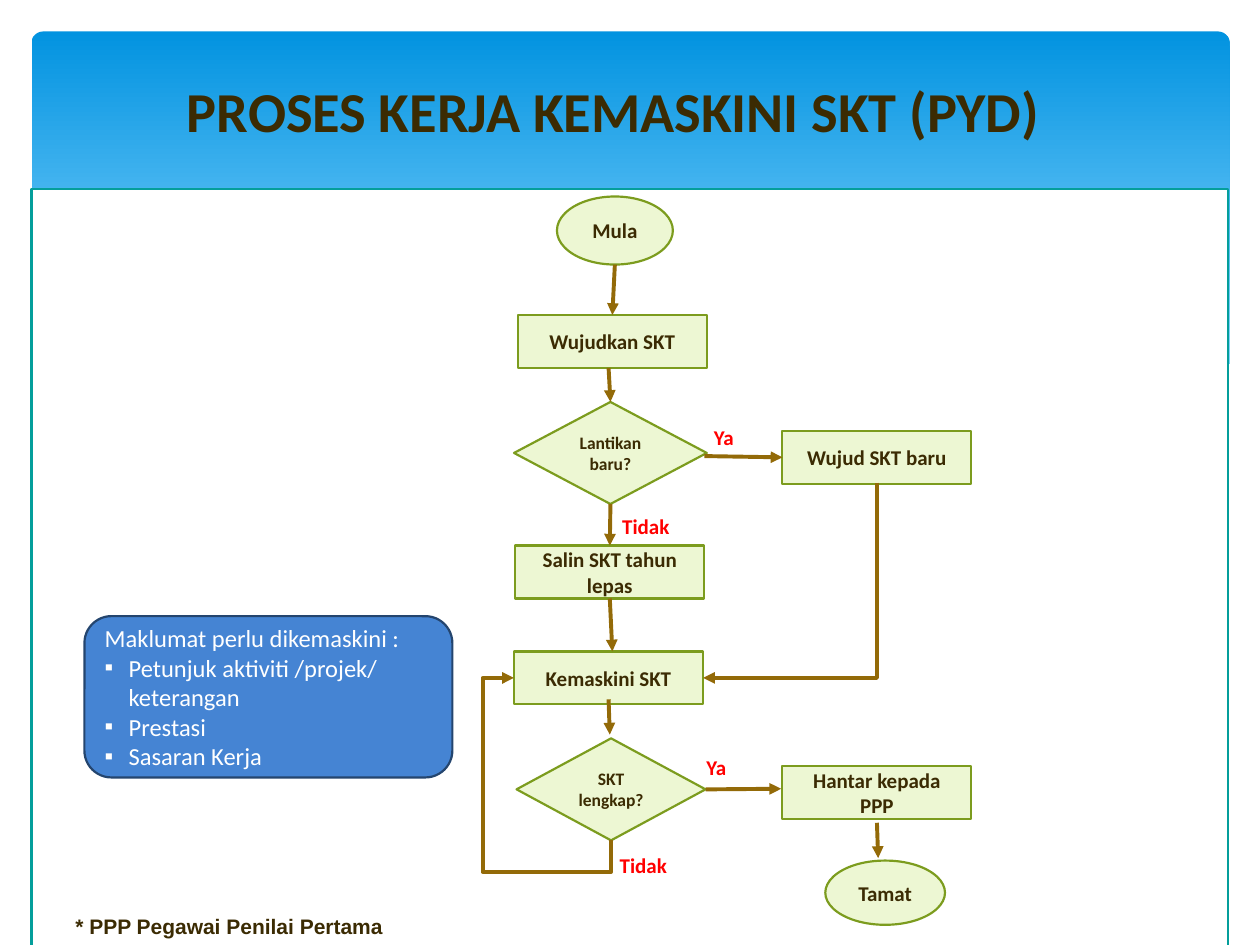
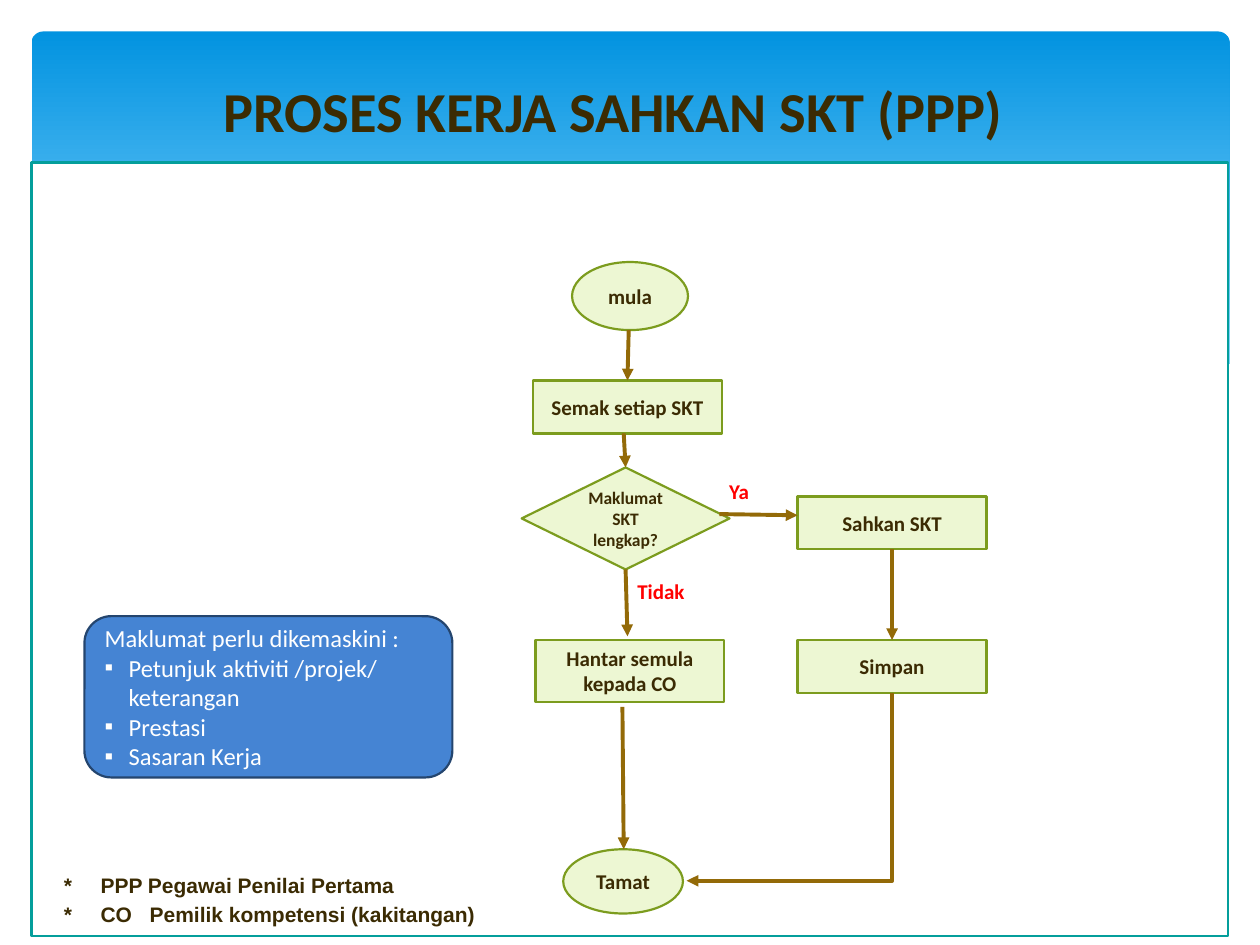
from dataclasses import dataclass

import pptx
import pptx.dml.color
import pptx.enum.shapes
import pptx.enum.text
import pptx.oxml.ns
import pptx.util
from lxml import etree

PX = 9144
JOIN_REACH = 2 * PX
QUARTER_TURN = 5400000
HANG = 19

Preset = pptx.enum.shapes.MSO_SHAPE
Align = pptx.enum.text.PP_ALIGN
Anchor = pptx.enum.text.MSO_ANCHOR
qn = pptx.oxml.ns.qn


@dataclass(frozen=True)
class TextStyle:
    font: str
    size: float
    color: str
    bold: bool = True
    before: float = 0


@dataclass(frozen=True)
class Theme:
    band_top: str = "0293E0"
    band_bottom: str = "83D3FE"
    panel_fill: str = "FFFFFF"
    panel_line: str = "049E9B"
    node_fill: str = "EDF7D3"
    node_line: str = "7C9C1E"
    arrow: str = "936A08"
    info_fill: str = "4584D3"
    info_line: str = "24456E"
    outline: float = 1.25
    arrow_width: float = 2.25
    title: TextStyle = TextStyle("Calibri", 32.2, "3B2B03")
    terminal: TextStyle = TextStyle("Calibri", 12, "3B2B03")
    step: TextStyle = TextStyle("Calibri", 12, "3B2B03", before=2.4)
    decision: TextStyle = TextStyle("Calibri", 10, "3B2B03")
    answer: TextStyle = TextStyle("Calibri", 12, "FF0000", before=2.4)
    info: TextStyle = TextStyle("Calibri", 14, "FFFFFF", bold=False)
    note: TextStyle = TextStyle("Arial", 12, "3B2B03", before=2.4)


THEME = Theme()


@dataclass(frozen=True)
class Area:
    left: int
    top: int
    width: int
    height: int

    def emu(self) -> tuple[int, ...]:
        return tuple(n * PX for n in (self.left, self.top, self.width, self.height))


@dataclass(frozen=True)
class Node:
    preset: Preset
    area: Area
    text: str
    style: TextStyle


@dataclass(frozen=True)
class Link:
    start: tuple[int, int]
    end: tuple[int, int]


@dataclass(frozen=True)
class Elbow:
    start: tuple[int, int]
    end: tuple[int, int]
    preset: str = "bentConnector2"
    adjustments: tuple[int, ...] = ()


@dataclass(frozen=True)
class Label:
    area: Area
    lines: tuple[str, ...]
    style: TextStyle
    align: Align = Align.LEFT
    tabs: tuple[int, ...] = ()


@dataclass(frozen=True)
class FlowPage:
    title: str
    panel_top: int
    nodes: tuple[Node, ...]
    links: tuple[Link, ...]
    elbows: tuple[Elbow, ...]
    labels: tuple[Label, ...]


def terminal(left: int, top: int, width: int, height: int, text: str) -> Node:
    return Node(Preset.OVAL, Area(left, top, width, height), text, THEME.terminal)


def step(left: int, top: int, text: str, height: int = 42) -> Node:
    return Node(Preset.RECTANGLE, Area(left, top, 150, height), text, THEME.step)


def decision(left: int, top: int, width: int, text: str) -> Node:
    return Node(Preset.FLOWCHART_DECISION, Area(left, top, width, 81), text, THEME.decision)


def yes(left: int, top: int, height: int) -> Label:
    return Label(Area(left, top, 45, height), ("Ya",), THEME.answer, Align.CENTER)


def no(left: int, top: int, height: int) -> Label:
    return Label(Area(left, top, 66, height), ("Tidak",), THEME.answer)


BAND = Area(25, 25, 951, 270)
TITLE = Area(12, 47, 949, 81)
INFO = Area(67, 489, 292, 128)
INFO_HEADING = "Maklumat perlu dikemaskini :"
INFO_ITEMS = ("Petunjuk aktiviti /projek/ keterangan", "Prestasi", "Sasaran Kerja")

PAGES = (
    FlowPage(
        "PROSES KERJA KEMASKINI SKT (PYD)",
        150,
        nodes=(
            terminal(442, 156, 92, 54, "Mula"),
            step(411, 250, "Wujudkan SKT"),
            decision(408, 319, 153, "Lantikan baru?"),
            step(621, 342, "Wujud SKT baru"),
            step(409, 433, "Salin SKT tahun lepas"),
            step(408, 517, "Kemaskini SKT"),
            decision(410, 586, 150, "SKT lengkap?"),
            step(621, 608, "Hantar kepada PPP"),
            terminal(655, 683, 95, 51, "Tamat"),
        ),
        links=(
            Link((488, 210), (486, 250)),
            Link((483, 292), (483, 320)),
            Link((485, 400), (486, 433)),
            Link((484, 475), (486, 517)),
            Link((483, 555), (484, 583)),
            Link((559, 362), (621, 362)),
            Link((558, 625), (620, 626)),
            Link((696, 653), (697, 681)),
        ),
        elbows=(
            Elbow((485, 667), (408, 538), "bentConnector4", (-19400, 132400)),
            Elbow((696, 383), (558, 538)),
        ),
        labels=(
            yes(552, 332, 30),
            no(484, 403, 29),
            no(482, 669, 36),
            yes(546, 588, 42),
            Label(Area(50, 714, 417, 42), ("* PPP Pegawai Penilai Pertama",), THEME.note),
        ),
    ),
    FlowPage(
        "PROSES KERJA SAHKAN SKT (PPP)",
        129,
        nodes=(
            terminal(454, 208, 92, 54, "mula"),
            step(423, 302, "Semak setiap SKT"),
            decision(414, 371, 165, "Maklumat SKT lengkap?"),
            step(633, 394, "Sahkan SKT"),
            step(425, 508, "Hantar semula kepada CO", 49),
            terminal(447, 674, 95, 51, "Tamat"),
            step(633, 508, "Simpan"),
        ),
        links=(
            Link((499, 262), (498, 302)),
            Link((495, 344), (495, 372)),
            Link((496, 452), (498, 505)),
            Link((571, 408), (633, 409)),
            Link((494, 561), (495, 674)),
            Link((708, 437), (708, 508)),
        ),
        elbows=(Elbow((708, 550), (545, 699)),),
        labels=(
            yes(564, 375, 30),
            no(496, 455, 29),
            Label(
                Area(41, 693, 417, 42),
                ("*\tPPP Pegawai Penilai Pertama", "*\tCO\tPemilik kompetensi (kakitangan)"),
                THEME.note,
                tabs=(29, 68),
            ),
        ),
    ),
)


def rgb(value: str) -> pptx.dml.color.RGBColor:
    return pptx.dml.color.RGBColor.from_string(value)


def write(frame, lines: tuple[str, ...], style: TextStyle, align: Align) -> None:
    frame.word_wrap = True
    frame.vertical_anchor = Anchor.MIDDLE
    for index, line in enumerate(lines):
        para = frame.add_paragraph() if index else frame.paragraphs[0]
        para.alignment = align
        para.space_before = pptx.util.Pt(style.before)
        span = para.add_run()
        span.text = line
        span.font.name = style.font
        span.font.size = pptx.util.Pt(style.size)
        span.font.bold = style.bold
        span.font.color.rgb = rgb(style.color)


def add_box(page, preset: Preset, area: Area, fill: str, line: str):
    box = page.shapes.add_shape(preset, *area.emu())
    box.shadow.inherit = False
    box.fill.solid()
    box.fill.fore_color.rgb = rgb(fill)
    box.line.color.rgb = rgb(line)
    box.line.width = pptx.util.Pt(THEME.outline)
    return box


def add_band(page, layout) -> None:
    band = page.shapes.add_shape(Preset.ROUNDED_RECTANGLE, *BAND.emu())
    band.adjustments[0] = 0.034
    band.shadow.inherit = False
    band.line.fill.background()
    band.fill.gradient()
    band.fill.gradient_angle = 270
    colors = (THEME.band_top, THEME.band_bottom)
    for stop, color, position in zip(band.fill.gradient_stops, colors, (0, 0.9)):
        stop.color.rgb = rgb(color)
        stop.position = position
    layout.shapes.element.insert(2, band.element)


def add_info(page) -> None:
    box = add_box(page, Preset.ROUNDED_RECTANGLE, INFO, THEME.info_fill, THEME.info_line)
    write(box.text_frame, (INFO_HEADING, *INFO_ITEMS), THEME.info, Align.LEFT)
    for para in box.text_frame.paragraphs[1:]:
        props = para._p.get_or_add_pPr()
        props.set("marL", str(HANG * PX))
        props.set("indent", str(-HANG * PX))
        etree.SubElement(props, qn("a:buFont"), typeface="Arial")
        etree.SubElement(props, qn("a:buChar"), char="▪")


def add_label(page, label: Label) -> None:
    box = page.shapes.add_textbox(*label.area.emu())
    write(box.text_frame, label.lines, label.style, label.align)
    if label.tabs:
        for para in box.text_frame.paragraphs:
            stops = etree.SubElement(para._p.get_or_add_pPr(), qn("a:tabLst"))
            for tab in label.tabs:
                etree.SubElement(stops, qn("a:tab"), pos=str(tab * PX), algn="l")


def style_arrow(arrow) -> None:
    arrow.line.color.rgb = rgb(THEME.arrow)
    arrow.line.width = pptx.util.Pt(THEME.arrow_width)
    props = arrow.element.spPr
    etree.SubElement(props.find(qn("a:ln")), qn("a:tailEnd"), type="triangle")
    etree.SubElement(props, qn("a:effectLst"))


def join(connect, point: tuple[int, int], boxes: list) -> None:
    x, y = (n * PX for n in point)
    for box in boxes:
        middle_x, middle_y = box.left + box.width // 2, box.top + box.height // 2
        right, bottom = box.left + box.width, box.top + box.height
        sites = ((middle_x, box.top), (box.left, middle_y), (middle_x, bottom), (right, middle_y))
        for site, (site_x, site_y) in enumerate(sites):
            if max(abs(site_x - x), abs(site_y - y)) <= JOIN_REACH:
                connect(box, site)


def add_link(page, link: Link, boxes: list) -> None:
    ends = (n * PX for n in link.start + link.end)
    arrow = page.shapes.add_connector(pptx.enum.shapes.MSO_CONNECTOR.STRAIGHT, *ends)
    join(arrow.begin_connect, link.start, boxes)
    join(arrow.end_connect, link.end, boxes)
    style_arrow(arrow)


def add_elbow(page, elbow: Elbow) -> None:
    (x1, y1), (x2, y2) = elbow.start, elbow.end
    run, drop = (y2 - y1) * PX, abs(x2 - x1) * PX
    center_x, center_y = (x1 + x2) * PX // 2, (y1 + y2) * PX // 2
    arrow = page.shapes.add_connector(
        pptx.enum.shapes.MSO_CONNECTOR.ELBOW,
        center_x - run // 2, center_y - drop // 2, center_x + run // 2, center_y + drop // 2,
    )
    props = arrow.element.spPr
    props.find(qn("a:xfrm")).set("rot", str(QUARTER_TURN))
    geometry = props.find(qn("a:prstGeom"))
    geometry.set("prst", elbow.preset)
    guides = geometry.find(qn("a:avLst"))
    for number, value in enumerate(elbow.adjustments, 1):
        etree.SubElement(guides, qn("a:gd"), name=f"adj{number}", fmla=f"val {value}")
    style_arrow(arrow)


def add_flow(page, flow: FlowPage) -> None:
    title = page.shapes.title
    title.left, title.top, title.width, title.height = TITLE.emu()
    title.text_frame.auto_size = pptx.enum.text.MSO_AUTO_SIZE.NONE
    write(title.text_frame, (flow.title,), THEME.title, Align.CENTER)
    panel = Area(25, flow.panel_top, 950, 614)
    add_box(page, Preset.RECTANGLE, panel, THEME.panel_fill, THEME.panel_line)
    joinable = []
    for node in flow.nodes:
        box = add_box(page, node.preset, node.area, THEME.node_fill, THEME.node_line)
        write(box.text_frame, (node.text,), node.style, Align.CENTER)
        if node.preset != Preset.OVAL:
            joinable.append(box)
    for link in flow.links:
        add_link(page, link, joinable)
    for elbow in flow.elbows:
        add_elbow(page, elbow)
    add_info(page)
    for label in flow.labels:
        add_label(page, label)


def main() -> None:
    deck = pptx.Presentation()
    deck.slide_width, deck.slide_height = 1000 * PX, 750 * PX
    layout = deck.slide_layouts[5]
    pages = [deck.slides.add_slide(layout) for _ in PAGES]
    add_band(pages[0], layout)
    for page, flow in zip(pages, PAGES):
        add_flow(page, flow)
    deck.save("out.pptx")


if __name__ == "__main__":
    main()
